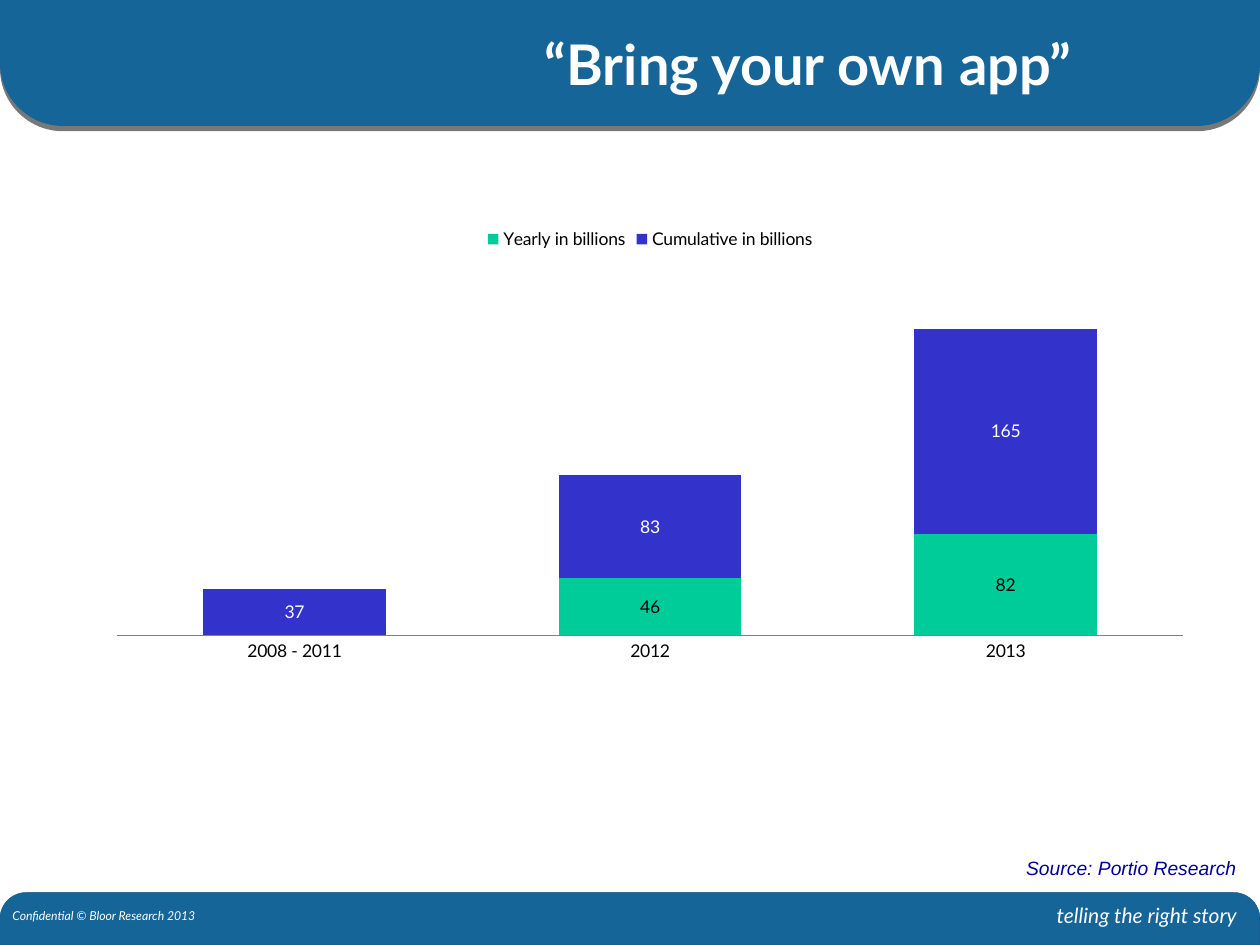
from lxml import etree
from pptx import Presentation
from pptx.chart.data import CategoryChartData
from pptx.dml.color import RGBColor
from pptx.enum import chart as ch, shapes, text
from pptx.oxml.ns import qn
from pptx.util import Pt

COLORS = {
    "band": "166598", "band_edge": "1A5A85", "white": "FFFFFF", "black": "000000",
    "yearly": "00CC99", "cumulative": "3333CC", "axis": "808080", "source": "000099",
}
LEFT, CENTER, RIGHT = text.PP_ALIGN.LEFT, text.PP_ALIGN.CENTER, text.PP_ALIGN.RIGHT


def rgb(name):
    return RGBColor.from_string(COLORS[name])


def style_font(font, color, **formats):
    font.color.rgb = rgb(color)
    for key, value in formats.items():
        setattr(font, key, value)


def write(shape, words, align, color, wrap=True, **formats):
    frame = shape.text_frame
    frame.word_wrap = wrap
    frame.vertical_anchor = text.MSO_ANCHOR.MIDDLE
    paragraph = frame.paragraphs[0]
    paragraph.alignment = align
    run = paragraph.add_run()
    run.text = words
    style_font(run.font, color, **formats)


def add_label(slide, box, *args, **formats):
    write(slide.shapes.add_textbox(*map(Pt, box)), *args, **formats)


def add_band(slide, box, top_round, bottom_round):
    band = slide.shapes.add_shape(
        shapes.MSO_SHAPE.ROUND_2_SAME_RECTANGLE, *map(Pt, box))
    band.adjustments[0], band.adjustments[1] = top_round, bottom_round
    band.shadow.inherit = False
    band.fill.solid()
    band.fill.fore_color.rgb = rgb("band")
    return band


def add_drop_shadow(shape, distance, opacity):
    effects = shape._element.spPr.find(qn("a:effectLst"))
    shadow = etree.SubElement(effects, qn("a:outerShdw"), dist=str(Pt(distance)),
                              dir="5400000", algn="t", rotWithShape="0")
    shade = etree.SubElement(shadow, qn("a:srgbClr"), val=COLORS["black"])
    etree.SubElement(shade, qn("a:alpha"), val=str(opacity * 1000))


def add_header(slide, box):
    left, top, width, height = box
    band = add_band(slide, box, 0, 0.5)
    band.line.fill.background()
    add_drop_shadow(band, 3, 53)

    title = slide.shapes.title
    title.left, title.top = Pt(left + 228), Pt(top + 12)
    title.width, title.height = Pt(468), Pt(height - 24)
    write(title, "“Bring your own app”", CENTER, "white",
          name="Lato", size=Pt(32), bold=True)
    slide.shapes._spTree.append(title._element)  # in front of the band


def add_footer(slide, box):
    left, top, width, height = box
    band = add_band(slide, box, 0.5, 0)
    band.line.color.rgb = rgb("band_edge")
    band.line.width = Pt(0.25)
    add_label(slide, (left + width - 312, top + 2, 306, 21.6), "telling the right story",
              RIGHT, "white", name="Lato", size=Pt(12), italic=True)
    add_label(slide, (left, top + 5.5, 240, 16), "Confidential © Bloor Research 2013",
              LEFT, "white", name="Lato", size=Pt(7), italic=True)


def add_downloads_chart(slide, box):
    data = CategoryChartData()
    data.categories = ["2008 - 2011", "2012", "2013"]
    data.add_series("Yearly in billions", [None, 46, 82])
    data.add_series("Cumulative in billions", [37, 83, 165])
    chart = slide.shapes.add_chart(
        ch.XL_CHART_TYPE.COLUMN_STACKED, *map(Pt, box), data).chart
    chart.has_title = False
    style_font(chart.font, "black", name="Lato", size=Pt(10))

    chart.has_legend = True
    chart.legend.position = ch.XL_LEGEND_POSITION.TOP
    chart.legend.include_in_layout = False

    years, billions = chart.category_axis, chart.value_axis
    years.major_tick_mark = ch.XL_TICK_MARK.NONE
    years.format.line.color.rgb = rgb("axis")
    years.format.line.width = Pt(0.75)
    billions.visible = False
    billions.has_major_gridlines = False
    billions.minimum_scale, billions.maximum_scale = 0, 300

    plot = chart.plots[0]
    plot.gap_width, plot.overlap = 95, 100
    plot.vary_by_categories = False
    looks = [("yearly", "black"), ("cumulative", "white")]
    for series, (fill, label) in zip(plot.series, looks):
        series.format.fill.solid()
        series.format.fill.fore_color.rgb = rgb(fill)
        labels = series.data_labels
        labels.show_value = True
        labels.position = ch.XL_LABEL_POSITION.CENTER
        style_font(labels.font, label, name="Lato", size=Pt(10))


def main():
    deck = Presentation()
    deck.slide_width, deck.slide_height = Pt(720), Pt(540)
    slide = deck.slides.add_slide(deck.slide_layouts[5])
    add_header(slide, (0, 0, 720, 72))
    add_footer(slide, (0, 510, 720, 30))
    add_downloads_chart(slide, (54, 122.5, 635, 260.5))
    add_label(slide, (579, 485.5, 135, 21), "Source: Portio Research", CENTER, "source",
              wrap=False, name="Arial", size=Pt(11), italic=True)
    deck.save("out.pptx")


if __name__ == "__main__":
    main()
